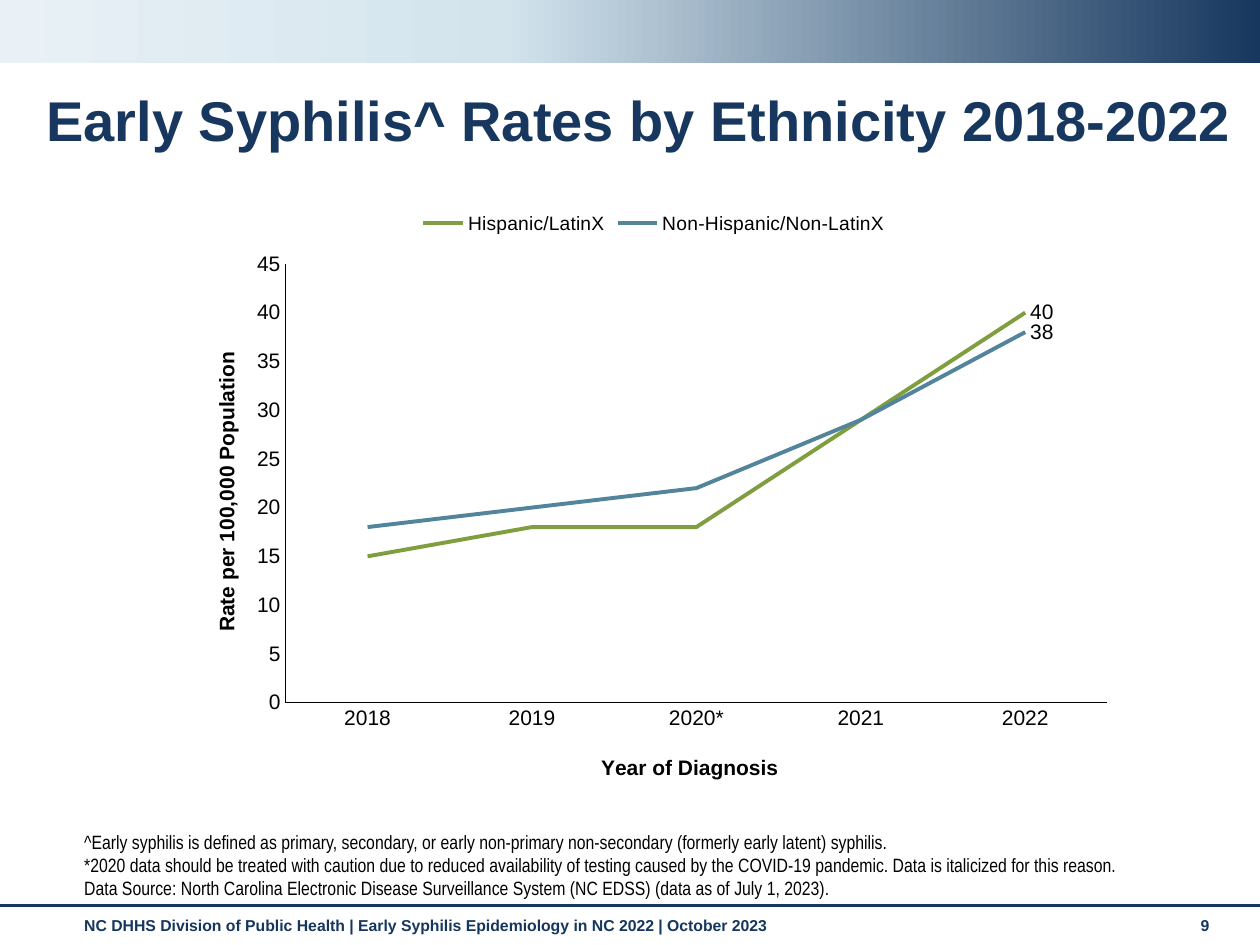
import pptx
import pptx.util
import pptx.chart.data
import pptx.dml.color
import pptx.enum.chart
import pptx.enum.shapes
import pptx.enum.text
import pptx.oxml
import pptx.oxml.ns
from pptx.util import Inches

COLORS = {
    "navy": "17375E", "footer": "15365E", "pale": "D3E4ED", "mist": "E9F1F6",
    "black": "000000", "green": "7F9E3F", "blue": "52849C",
}
rgb = {name: pptx.dml.color.RGBColor.from_string(code) for name, code in COLORS.items()}
qn = pptx.oxml.ns.qn
Anchor = pptx.enum.text.MSO_ANCHOR


def add_text(page, area, lines, size, color, bold=False, font="Arial", anchor=Anchor.TOP, spacing=None):
    box = page.shapes.add_textbox(*map(Inches, area))
    frame = box.text_frame
    frame.word_wrap = True
    frame.vertical_anchor = anchor
    frame.text = "\n".join(lines)
    for para in frame.paragraphs:
        para.line_spacing = spacing
        style_font(para.font, size, color, bold, font)


def style_font(font, size, color="black", bold=False, name="Arial"):
    font.name = name
    font.size = pptx.util.Pt(size)
    font.bold = bold
    font.color.rgb = rgb[color]


deck = pptx.Presentation()
deck.slide_width, deck.slide_height = Inches(10), Inches(7.5)
page = deck.slides.add_slide(deck.slide_layouts[6])

# Top band, dark at the right
band = page.shapes.add_shape(pptx.enum.shapes.MSO_SHAPE.RECTANGLE, 0, 0, Inches(10), Inches(0.5))
band.shadow.inherit = False
band.line.fill.background()
band.fill.gradient()
band.fill.gradient_angle = 180
stops = band._element.spPr.find(".//" + qn("a:gsLst"))
for stop in list(stops):
    stops.remove(stop)
for position, name in ((0, "navy"), (60, "pale"), (100, "mist")):
    stop = pptx.oxml.parse_xml(
        f'<a:gs {pptx.oxml.ns.nsdecls("a")} pos="{position * 1000}">'
        f'<a:srgbClr val="{COLORS[name]}"/></a:gs>')
    stops.append(stop)

# Footer rule
rule = page.shapes.add_connector(
    pptx.enum.shapes.MSO_CONNECTOR.STRAIGHT, 0, Inches(7.19), Inches(10), Inches(7.19))
rule.line.color.rgb = rgb["navy"]
rule.line.width = pptx.util.Pt(1.75)
rule._element.spPr.append(pptx.oxml.parse_xml(f'<a:effectLst {pptx.oxml.ns.nsdecls("a")}/>'))

# Title, footnotes, footer and page number
add_text(page, (0.27, 0.68, 9.73, 0.6), ["Early Syphilis^ Rates by Ethnicity 2018-2022"],
         32, "navy", bold=True, anchor=Anchor.MIDDLE, spacing=0.9)
add_text(page, (0.57, 6.83, 9.1, 0.36), [
    "^Early syphilis is defined as primary, secondary, or early non-primary non-secondary "
    "(formerly early latent) syphilis.",
    "*2020 data should be treated with caution due to reduced availability of testing caused by "
    "the COVID-19 pandemic. Data is italicized for this reason.",
    "Data Source: North Carolina Electronic Disease Surveillance System (NC EDSS) "
    "(data as of July 1, 2023).",
], 11, "black", font="Arial Narrow", anchor=Anchor.BOTTOM)
add_text(page, (0.57, 7.22, 8.74, 0.29),
         ["NC DHHS Division of Public Health | Early Syphilis Epidemiology in NC 2022 | October 2023"],
         9, "footer", bold=True)
add_text(page, (9.43, 7.22, 0.44, 0.3), ["9"], 9, "footer", bold=True)

# Line chart
rates = pptx.chart.data.CategoryChartData(number_format="#,##0")
rates.categories = ["2018", "2019", "2020*", "2021", "2022"]
rates.add_series("Hispanic/LatinX", [15, 18, 18, 29, 40])
rates.add_series("Non-Hispanic/Non-LatinX", [18, 20, 22, 29, 38])
chart = page.shapes.add_chart(
    pptx.enum.chart.XL_CHART_TYPE.LINE,
    Inches(1.44), Inches(1.57), Inches(7.5), Inches(4.77), rates).chart
style_font(chart.font, 10)
chart.has_title = False
chart.has_legend = True
chart.legend.position = pptx.enum.chart.XL_LEGEND_POSITION.TOP
chart.legend.include_in_layout = False
style_font(chart.legend.font, 11)
chart.plots[0].vary_by_categories = False

# Series, with a label on the last year only
for series, name in zip(chart.plots[0].series, ("green", "blue")):
    series.smooth = False
    series.format.line.color.rgb = rgb[name]
    series.format.line.width = pptx.util.Pt(2.25)
    series.marker.style = pptx.enum.chart.XL_MARKER_STYLE.NONE
    series.data_labels.show_value = False
    label = series.points[4].data_label
    label.position = pptx.enum.chart.XL_LABEL_POSITION.RIGHT
    style_font(label.font, 12)

# Axes
years, scale = chart.category_axis, chart.value_axis
scale.minimum_scale, scale.maximum_scale, scale.major_unit = 0, 45, 5
for axis, caption in ((years, "Year of Diagnosis"), (scale, "Rate per 100,000 Population")):
    axis.has_major_gridlines = False
    axis.major_tick_mark = axis.minor_tick_mark = pptx.enum.chart.XL_TICK_MARK.NONE
    axis.format.line.color.rgb = rgb["black"]
    axis.format.line.width = pptx.util.Pt(0.75)
    style_font(axis.tick_labels.font, 12)
    axis.axis_title.text_frame.text = caption
    style_font(axis.axis_title.text_frame.paragraphs[0].font, 12, bold=True)

# Places of the plot and the axis titles, as fractions of the chart
plot_area = chart._chartSpace.chart.plotArea
for parent, index, place in (
    (plot_area, 0, {"layoutTarget": "inner", "xMode": "edge", "yMode": "edge",
                    "x": 0.11, "y": 0.11, "w": 0.87, "h": 0.73}),
    (years.axis_title._element, 1, {"xMode": "edge", "yMode": "edge", "x": 0.44, "y": 0.92}),
    (scale.axis_title._element, 1, {"xMode": "edge", "yMode": "edge", "x": 0.03, "y": 0.25}),
):
    for old in parent.findall(qn("c:layout")):
        parent.remove(old)
    settings = "".join(f'<c:{key} val="{value}"/>' for key, value in place.items())
    parent.insert(index, pptx.oxml.parse_xml(
        f'<c:layout {pptx.oxml.ns.nsdecls("c")}><c:manualLayout>{settings}</c:manualLayout></c:layout>'))

deck.save("out.pptx")
